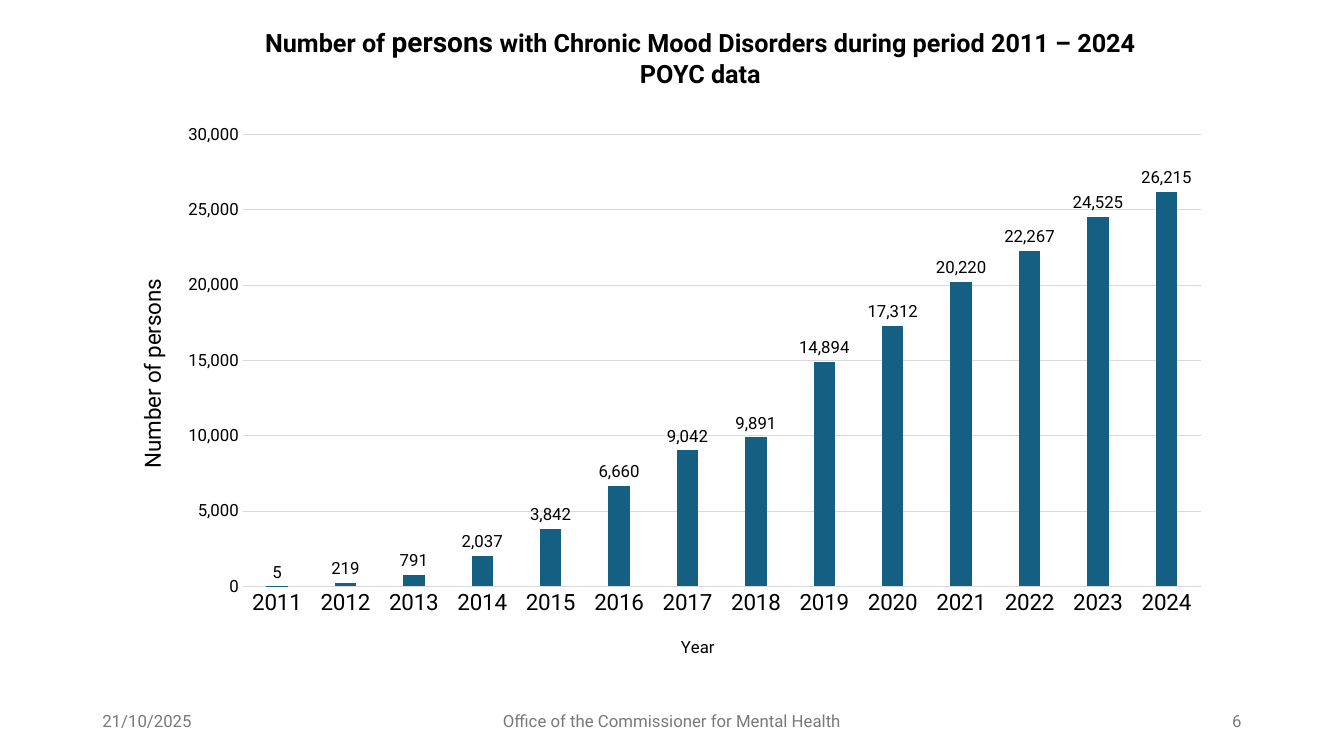
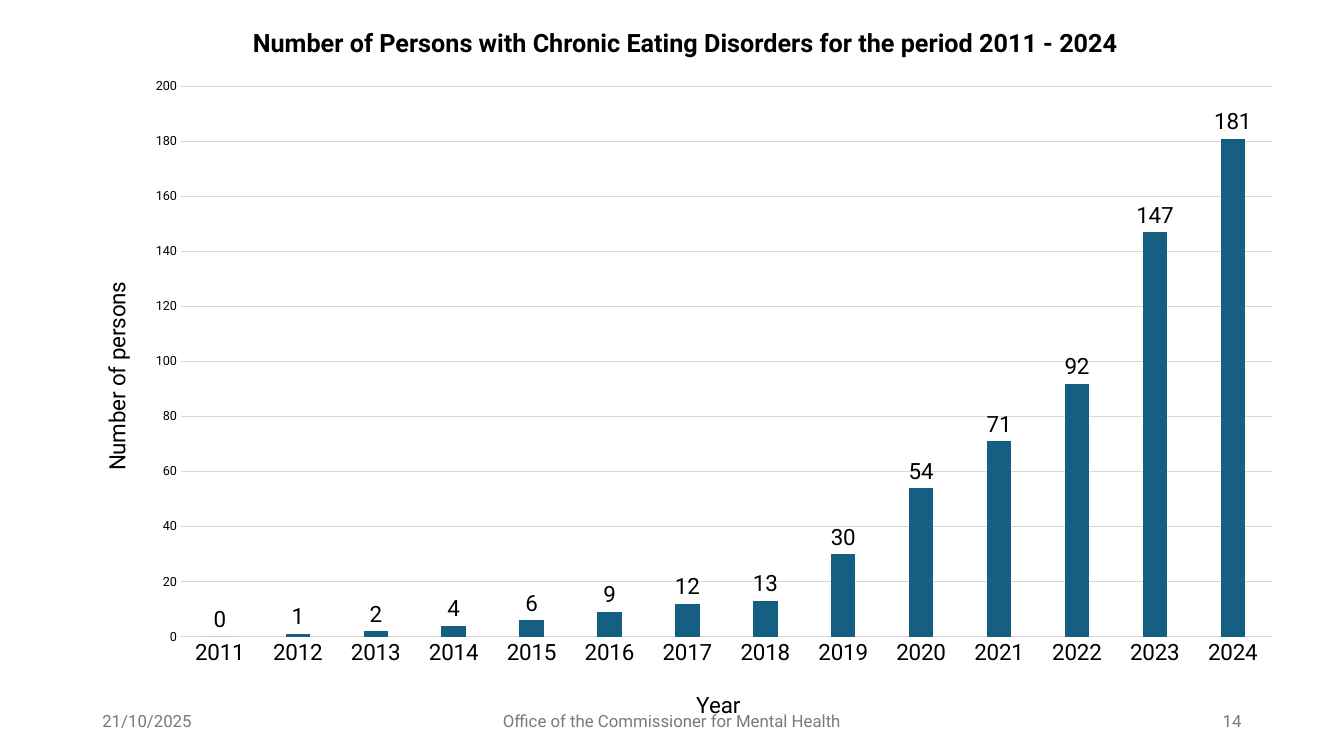
from dataclasses import dataclass

from lxml import etree
from pptx import Presentation
from pptx.chart.axis import CategoryAxis, ValueAxis
from pptx.chart.chart import Chart
from pptx.chart.data import CategoryChartData
from pptx.dml.color import RGBColor
from pptx.enum.chart import XL_CHART_TYPE, XL_LABEL_POSITION, XL_TICK_MARK
from pptx.enum.text import MSO_ANCHOR, MSO_AUTO_SIZE, PP_ALIGN
from pptx.oxml.ns import qn
from pptx.slide import Slide
from pptx.util import Cm, Pt

COLUMNS = XL_CHART_TYPE.COLUMN_CLUSTERED
OUTSIDE_END = XL_LABEL_POSITION.OUTSIDE_END
NO_TICK = XL_TICK_MARK.NONE
TOP, MIDDLE = MSO_ANCHOR.TOP, MSO_ANCHOR.MIDDLE
FIXED_SIZE = MSO_AUTO_SIZE.NONE
LEFT, CENTER, RIGHT = PP_ALIGN.LEFT, PP_ALIGN.CENTER, PP_ALIGN.RIGHT

FONT = "Roboto"
BLACK = "000000"
COLUMN_BLUE = "156082"
GRID_GREY = "D9D9D9"
FOOTER_GREY = "797979"
THOUSANDS = "#,##0"
YEARS = [str(year) for year in range(2011, 2025)]
TITLE_WIDTH = 25.4
TITLE_ONLY = 5


@dataclass(frozen=True)
class Box:
    left: float
    top: float
    width: float
    height: float

    def lengths(self) -> tuple[Cm, Cm, Cm, Cm]:
        return Cm(self.left), Cm(self.top), Cm(self.width), Cm(self.height)


@dataclass(frozen=True)
class TitleRun:
    text: str
    size: int = 18


@dataclass(frozen=True)
class AxisCaption:
    text: str
    size: int
    left: float
    top: float


@dataclass(frozen=True)
class FooterPart:
    text: str
    left: float
    width: float
    alignment: PP_ALIGN


@dataclass(frozen=True)
class YearlySlide:
    title_lines: list[list[TitleRun]]
    title_center: float
    title_top: float
    title_height: float
    frame: Box
    plot: Box
    year_caption: AxisCaption
    persons_caption: AxisCaption
    persons: list[int]
    axis_maximum: int
    axis_step: int
    axis_size: int
    label_size: int
    number: int


YEARLY_SLIDES = [
    YearlySlide(
        title_lines=[
            [
                TitleRun("Number of "),
                TitleRun("persons", 20),
                TitleRun(" with Chronic Mood Disorders during period 2011 – 2024"),
            ],
            [TitleRun("POYC data")],
        ],
        title_center=17.65,
        title_top=0.62,
        title_height=1.65,
        frame=Box(2.77, 2.4, 28.07, 14.62),
        plot=Box(6.12, 3.39, 24.14, 11.39),
        year_caption=AxisCaption("Year", 12, 17.08, 15.95),
        persons_caption=AxisCaption("Number of persons", 16, 3.38, 6.93),
        persons=[5, 219, 791, 2037, 3842, 6660, 9042, 9891,
                 14894, 17312, 20220, 22267, 24525, 26215],
        axis_maximum=30000,
        axis_step=5000,
        axis_size=12,
        label_size=12,
        number=6,
    ),
    YearlySlide(
        title_lines=[
            [TitleRun("Number of Persons with Chronic Eating Disorders for the period 2011 - 2024")],
        ],
        title_center=17.27,
        title_top=0.68,
        title_height=0.8,
        frame=Box(1.88, 1.6, 30.78, 16.94),
        plot=Box(4.56, 2.18, 27.49, 13.87),
        year_caption=AxisCaption("Year", 16, 17.44, 17.31),
        persons_caption=AxisCaption("Number of persons", 16, 2.49, 7.0),
        persons=[0, 1, 2, 4, 6, 9, 12, 13, 30, 54, 71, 92, 147, 181],
        axis_maximum=200,
        axis_step=20,
        axis_size=9,
        label_size=16,
        number=14,
    ),
]


def rgb(color: str) -> RGBColor:
    return RGBColor.from_string(color)


def style_font(font, size: int, color: str = BLACK, bold: bool = False) -> None:
    font.name = FONT
    font.size = Pt(size)
    font.bold = bold
    font.color.rgb = rgb(color)


def set_layout(parent, index: int, settings: dict[str, str | float]) -> None:
    for previous in parent.findall(qn("c:layout")):
        parent.remove(previous)
    layout = etree.Element(qn("c:layout"))
    manual = etree.SubElement(layout, qn("c:manualLayout"))
    for tag, value in settings.items():
        etree.SubElement(manual, qn(f"c:{tag}")).set("val", str(value))
    parent.insert(index, layout)


def position_in(frame: Box, left: float, top: float) -> dict[str, str | float]:
    return {
        "xMode": "edge",
        "yMode": "edge",
        "x": round((left - frame.left) / frame.width, 4),
        "y": round((top - frame.top) / frame.height, 4),
    }


def add_title(slide: Slide, content: YearlySlide) -> None:
    title = slide.shapes.title
    title.left, title.top, title.width, title.height = Box(
        content.title_center - TITLE_WIDTH / 2,
        content.title_top,
        TITLE_WIDTH,
        content.title_height,
    ).lengths()
    frame = title.text_frame
    frame.auto_size = FIXED_SIZE
    frame.word_wrap = True
    frame.vertical_anchor = TOP
    frame.margin_left = frame.margin_right = frame.margin_top = frame.margin_bottom = 0
    for position, line in enumerate(content.title_lines):
        paragraph = frame.add_paragraph() if position else frame.paragraphs[0]
        paragraph.alignment = CENTER
        style_font(paragraph.font, line[0].size, bold=True)
        for part in line:
            run = paragraph.add_run()
            run.text = part.text
            if part.size != line[0].size:
                run.font.size = Pt(part.size)


def add_caption(axis: CategoryAxis | ValueAxis, caption: AxisCaption, frame: Box) -> None:
    axis.has_title = True
    text = axis.axis_title.text_frame
    text.text = caption.text
    style_font(text.paragraphs[0].font, caption.size)
    title = axis.axis_title.element
    if isinstance(axis, ValueAxis):
        title.find(".//" + qn("a:bodyPr")).set("rot", "-5400000")
    set_layout(title, 1, position_in(frame, caption.left, caption.top))


def style_axes(chart: Chart, content: YearlySlide) -> None:
    years, persons = chart.category_axis, chart.value_axis
    for axis, size in ((years, 16), (persons, content.axis_size)):
        axis.major_tick_mark = axis.minor_tick_mark = NO_TICK
        style_font(axis.tick_labels.font, size)
    persons.minimum_scale = 0
    persons.maximum_scale = content.axis_maximum
    persons.major_unit = content.axis_step
    persons.tick_labels.number_format = THOUSANDS
    persons.tick_labels.number_format_is_linked = False
    persons.has_major_gridlines = True
    persons.format.line.fill.background()
    for line in (years.format.line, persons.major_gridlines.format.line):
        line.color.rgb = rgb(GRID_GREY)
        line.width = Pt(0.75)
    add_caption(years, content.year_caption, content.frame)
    add_caption(persons, content.persons_caption, content.frame)


def add_yearly_chart(slide: Slide, content: YearlySlide) -> None:
    data = CategoryChartData(number_format=THOUSANDS)
    data.categories = YEARS
    data.add_series("Series 1", content.persons)
    chart = slide.shapes.add_chart(COLUMNS, *content.frame.lengths(), data).chart
    chart.has_title = False
    chart.has_legend = False
    style_font(chart.font, content.axis_size)
    style_axes(chart, content)

    columns = chart.plots[0]
    columns.gap_width = 219
    columns.overlap = -27
    columns.vary_by_categories = False
    fill = columns.series[0].format.fill
    fill.solid()
    fill.fore_color.rgb = rgb(COLUMN_BLUE)
    columns.has_data_labels = True
    labels = columns.data_labels
    labels.show_value = True
    labels.position = OUTSIDE_END
    labels.number_format = THOUSANDS
    labels.number_format_is_linked = False
    style_font(labels.font, content.label_size)

    frame, plot = content.frame, content.plot
    set_layout(chart.element.find(".//" + qn("c:plotArea")), 0, {
        "layoutTarget": "inner",
        **position_in(frame, plot.left, plot.top),
        "w": round(plot.width / frame.width, 4),
        "h": round(plot.height / frame.height, 4),
    })


def add_footer(slide: Slide, number: int) -> None:
    parts = (
        FooterPart("21/10/2025", 2.33, 7.62, LEFT),
        FooterPart("Office of the Commissioner for Mental Health", 11.22, 11.43, CENTER),
        FooterPart(str(number), 23.92, 7.62, RIGHT),
    )
    for part in parts:
        box = Box(part.left, 17.65, part.width, 1.02)
        frame = slide.shapes.add_textbox(*box.lengths()).text_frame
        frame.word_wrap = True
        frame.vertical_anchor = MIDDLE
        paragraph = frame.paragraphs[0]
        paragraph.text = part.text
        paragraph.alignment = part.alignment
        style_font(paragraph.font, 12, FOOTER_GREY)


def main() -> None:
    deck = Presentation()
    deck.slide_width, deck.slide_height = Cm(33.87), Cm(19.05)
    for content in YEARLY_SLIDES:
        slide = deck.slides.add_slide(deck.slide_layouts[TITLE_ONLY])
        add_title(slide, content)
        add_yearly_chart(slide, content)
        add_footer(slide, content.number)
    deck.save("out.pptx")


if __name__ == "__main__":
    main()
